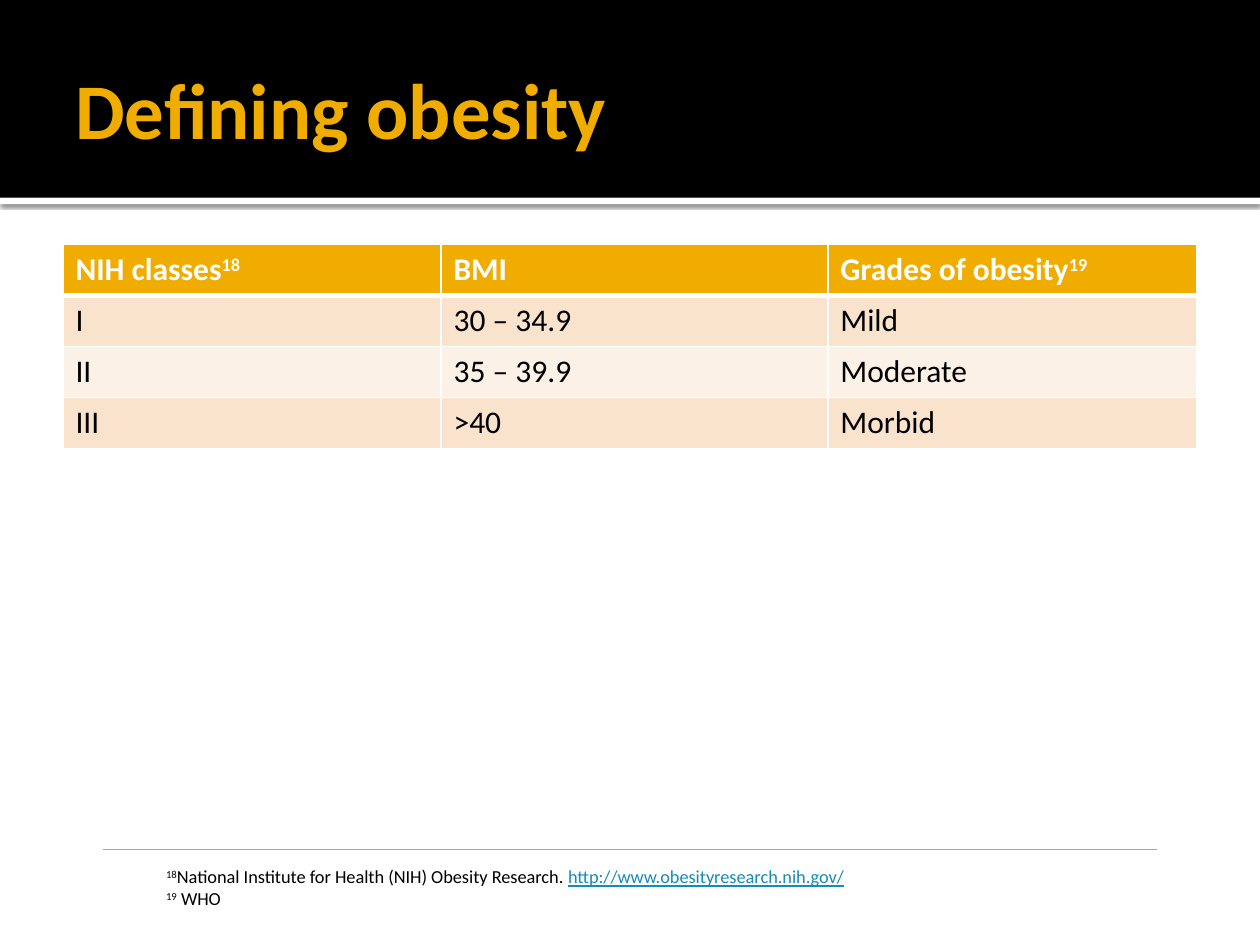
from dataclasses import dataclass

from lxml.etree import SubElement
from pptx import Presentation
from pptx.dml.color import RGBColor
from pptx.enum.shapes import MSO_CONNECTOR, MSO_SHAPE
from pptx.enum.text import MSO_ANCHOR
from pptx.oxml.ns import qn
from pptx.util import Inches, Pt


@dataclass(frozen=True)
class Theme:
    font: str = "Calibri"
    gold: str = "F0AD00"
    black: str = "000000"
    white: str = "FFFFFF"
    peach: str = "F9E3CC"
    cream: str = "FCF1E7"
    gray: str = "A6A6A6"
    link: str = "168BBA"
    title: float = 45
    body: float = 18
    note: float = 10.5


THEME = Theme()
WIDTHS = (3, 3.07, 2.93)
# Each cell is its text and an optional superscript
ROWS = (
    (("NIH classes", "18"), ("BMI", ""), ("Grades of obesity", "19")),
    (("I", ""), ("30 – 34.9", ""), ("Mild", "")),
    (("II", ""), ("35 – 39.9", ""), ("Moderate", "")),
    (("III", ""), (">40", ""), ("Morbid", "")),
)


def color(code):
    return RGBColor.from_string(code)


def add_run(para, text, size, tint, bold=False, raised=False, under=False):
    run = para.add_run()
    run.text = text
    font = run.font
    font.name, font.size, font.bold = THEME.font, Pt(size), bold
    font.underline = under
    font.color.rgb = color(tint)
    if raised:
        run._r.get_or_add_rPr().set("baseline", "30000")


def add_bar(slide, top, height, fill):
    bar = slide.shapes.add_shape(
        MSO_SHAPE.RECTANGLE, 0, Inches(top), Inches(10), Inches(height))
    bar.fill.solid()
    bar.fill.fore_color.rgb = color(fill)
    bar.line.fill.background()
    bar.shadow.inherit = False
    return bar


def add_shade(bar):
    effects = bar._element.spPr.find(qn("a:effectLst"))
    shade = SubElement(effects, qn("a:outerShdw"), blurRad=str(Pt(2.5)),
                       dist=str(Pt(0.8)), dir="5400000", rotWithShape="0")
    tint = SubElement(shade, qn("a:srgbClr"), val=THEME.black)
    SubElement(tint, qn("a:alpha"), val="60000")


def add_box(slide, left, top, width, height):
    box = slide.shapes.add_textbox(
        Inches(left), Inches(top), Inches(width), Inches(height))
    box.text_frame.word_wrap = True
    return box.text_frame


def add_edge(props, side, width):
    edge = SubElement(props, qn(f"a:{side}"), w=str(Pt(width)))
    fill = SubElement(edge, qn("a:solidFill"))
    SubElement(fill, qn("a:srgbClr"), val=THEME.white)


def fill_cell(cell, text, mark, row):
    head = row == 0
    tint = THEME.white if head else THEME.black
    para = cell.text_frame.paragraphs[0]
    add_run(para, text, THEME.body, tint, head)
    if mark:
        add_run(para, mark, THEME.body, tint, head, raised=True)
    # Borders come before the fill in the cell properties
    props = cell._tc.get_or_add_tcPr()
    for side in ("lnL", "lnR", "lnT", "lnB"):
        thick = (head and side == "lnB") or (row == 1 and side == "lnT")
        add_edge(props, side, 3 if thick else 1)
    cell.fill.solid()
    band = THEME.peach if row % 2 else THEME.cream
    cell.fill.fore_color.rgb = color(THEME.gold if head else band)


def add_grid(slide):
    table = slide.shapes.add_table(
        len(ROWS), len(WIDTHS), Inches(0.5), Inches(1.94),
        Inches(sum(WIDTHS)), Inches(1.62)).table
    for column, width in zip(table.columns, WIDTHS):
        column.width = Inches(width)
    for row, cells in enumerate(ROWS):
        for col, (text, mark) in enumerate(cells):
            fill_cell(table.cell(row, col), text, mark, row)


def add_rule(slide, left, right, top):
    rule = slide.shapes.add_connector(
        MSO_CONNECTOR.STRAIGHT, Inches(left), Inches(top),
        Inches(right), Inches(top))
    rule.line.color.rgb = color(THEME.gray)
    rule.line.width = Pt(0.5)
    SubElement(rule._element.spPr, qn("a:effectLst"))


def add_title(slide):
    frame = add_box(slide, 0.5, 0.17, 9, 1.37)
    frame.vertical_anchor = MSO_ANCHOR.MIDDLE
    frame.margin_right = Inches(0.05)
    add_run(frame.paragraphs[0], "Defining obesity", THEME.title,
            THEME.gold, bold=True)


def add_notes(slide):
    frame = add_box(slide, 1.22, 6.82, 5.74, 0.45)
    first, second = frame.paragraphs[0], frame.add_paragraph()
    for para, mark, text in (
        (first, "18", "National Institute for Health (NIH) Obesity Research. "),
        (second, "19", " WHO"),
    ):
        add_run(para, mark, THEME.note, THEME.black, raised=True)
        add_run(para, text, THEME.note, THEME.black)
    add_run(first, "http://www.obesityresearch.nih.gov/", THEME.note,
            THEME.link, under=True)


def main():
    deck = Presentation()
    deck.slide_width, deck.slide_height = Inches(10), Inches(7.5)
    slide = deck.slides.add_slide(deck.slide_layouts[6])
    # Header band
    add_shade(add_bar(slide, 1.57, 0.05, THEME.white))
    add_bar(slide, 0, 1.57, THEME.black)
    add_title(slide)
    # Obesity classes
    add_grid(slide)
    # Sources
    add_rule(slide, 0.82, 9.18, 6.74)
    add_notes(slide)
    deck.save("out.pptx")


if __name__ == "__main__":
    main()
